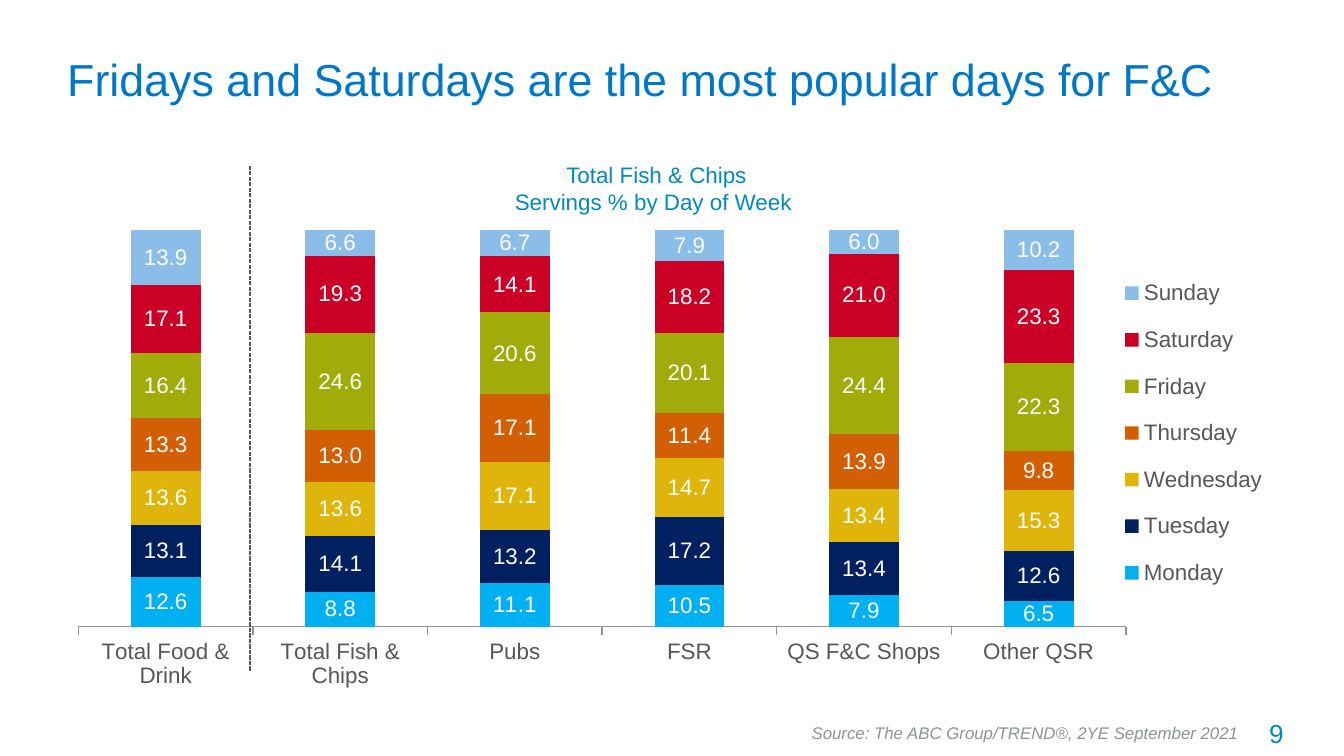
from lxml.etree import SubElement
from pptx import Presentation
from pptx.chart.data import CategoryChartData
from pptx.dml.color import RGBColor
from pptx.enum.chart import XL_CHART_TYPE, XL_LEGEND_POSITION, XL_TICK_LABEL_POSITION, XL_TICK_MARK
from pptx.enum.dml import MSO_LINE
from pptx.enum.shapes import MSO_CONNECTOR
from pptx.enum.text import MSO_ANCHOR, PP_ALIGN
from pptx.oxml.ns import qn
from pptx.util import Inches, Pt

FONT = "Arial"
COLORS = {
    "title": "0077C8", "accent": "008AC0", "text": "54585A", "muted": "8E9396", "label": "FFFFFF",
    "Monday": "00B0F0", "Tuesday": "002060", "Wednesday": "E0B50B", "Thursday": "D25F04",
    "Friday": "A1AC0A", "Saturday": "CA0026", "Sunday": "8ABDE8",
}
CATEGORIES = ["Total Food & Drink", "Total Fish & Chips", "Pubs", "FSR", "QS F&C Shops", "Other QSR"]
SERVINGS = {
    "Monday": [12.6, 8.8, 11.1, 10.5, 7.9, 6.5],
    "Tuesday": [13.1, 14.1, 13.2, 17.2, 13.4, 12.6],
    "Wednesday": [13.6, 13.6, 17.1, 14.7, 13.4, 15.3],
    "Thursday": [13.3, 13.0, 17.1, 11.4, 13.9, 9.8],
    "Friday": [16.4, 24.6, 20.6, 20.1, 24.4, 22.3],
    "Saturday": [17.1, 19.3, 14.1, 18.2, 21.0, 23.3],
    "Sunday": [13.9, 6.6, 6.7, 7.9, 6.0, 10.2],
}


def write(box, lines, size, color, align=PP_ALIGN.LEFT, italic=False, wrap=True, anchor=MSO_ANCHOR.TOP):
    """Fill a box with one paragraph per line, all in one format."""
    frame = box.text_frame
    frame.word_wrap, frame.vertical_anchor = wrap, anchor
    for number, line in enumerate(lines):
        para = frame.add_paragraph() if number else frame.paragraphs[0]
        para.alignment = align
        span = para.add_run()
        span.text = line
        span.font.name, span.font.size, span.font.italic = FONT, Pt(size), italic
        span.font.color.rgb = RGBColor.from_string(COLORS[color])


def place(layout, **shares):
    """Fix a chart part at shares (x, y, w, h) of the chart's size."""
    manual = SubElement(layout, qn("c:manualLayout"))
    if layout.getparent().tag == qn("c:plotArea"):
        SubElement(manual, qn("c:layoutTarget")).set("val", "inner")
    for side in "xy":
        SubElement(manual, qn(f"c:{side}Mode")).set("val", "edge")
    for side, share in shares.items():
        SubElement(manual, qn(f"c:{side}")).set("val", str(share))


# A 16:9 page
deck = Presentation()
deck.slide_width = Inches(10)
deck.slide_height = deck.slide_width * 9 // 16
page = deck.slides.add_slide(deck.slide_layouts[5])
left, width = Inches(0.4), Inches(9.17)

# Title
title = page.shapes.title
title.left, title.top, title.width, title.height = left, Inches(0.23), width, Inches(0.71)
write(title, ["Fridays and Saturdays are the most popular days for F&C"], 24, "title",
      anchor=MSO_ANCHOR.MIDDLE)

# Stacked chart of servings by day
data = CategoryChartData(number_format="0.0")
data.categories = CATEGORIES
for day, values in SERVINGS.items():
    data.add_series(day, values)
chart = page.shapes.add_chart(XL_CHART_TYPE.COLUMN_STACKED_100, left, Inches(1.71),
                              width, Inches(3.56), data).chart
chart.has_title = False
chart.font.name, chart.font.size = FONT, Pt(12)
chart.font.color.rgb = RGBColor.from_string(COLORS["text"])

plot = chart.plots[0]
plot.gap_width, plot.overlap, plot.vary_by_categories = 150, 100, False
for series in plot.series:
    series.format.fill.solid()
    series.format.fill.fore_color.rgb = RGBColor.from_string(COLORS[series.name])
    labels = series.data_labels
    labels.show_value = True
    labels.number_format, labels.number_format_is_linked = "0.0", False
    labels.font.name, labels.font.size = FONT, Pt(12)
    labels.font.color.rgb = RGBColor.from_string(COLORS["label"])

# Axes
chart.value_axis.visible = False
chart.value_axis.has_major_gridlines = False
axis = chart.category_axis
axis.major_tick_mark = XL_TICK_MARK.OUTSIDE
axis.tick_label_position = XL_TICK_LABEL_POSITION.LOW
axis.format.line.color.rgb = RGBColor.from_string(COLORS["muted"])
axis.format.line.width = Pt(0.75)

# Plot area and legend positions
chart.has_legend = True
legend = chart.legend
legend.position, legend.include_in_layout = XL_LEGEND_POSITION.RIGHT, False
area = chart.element.find(".//" + qn("c:plotArea"))
layout = area.find(qn("c:layout"))
if layout is None:
    layout = SubElement(area, qn("c:layout"))
    area.insert(0, layout)
place(layout, x=0.02, y=0, w=0.85, h=0.83)
legend_element = chart.element.find(".//" + qn("c:legend"))
layout = legend_element.find(qn("c:layout"))
if layout is None:
    layout = SubElement(legend_element, qn("c:layout"))
    legend_element.find(qn("c:legendPos")).addnext(layout)
place(layout, x=0.85, y=0.06, w=0.15, h=0.73)

# Chart heading
heading = page.shapes.add_textbox(Inches(3.72), Inches(1.15), Inches(2.33), Inches(0.51))
write(heading, ["Total Fish & Chips", "Servings % by Day of Week "], 12, "accent",
      align=PP_ALIGN.CENTER, wrap=False)

# Divider after the all-food column
divider = page.shapes.add_connector(MSO_CONNECTOR.STRAIGHT, Inches(1.86), Inches(4.99),
                                    Inches(1.86), Inches(1.23))
divider.line.color.rgb = RGBColor.from_string(COLORS["text"])
divider.line.width, divider.line.dash_style = Pt(0.75), MSO_LINE.SQUARE_DOT
SubElement(divider.element.spPr, qn("a:effectLst"))

# Footer: source and page number
source = page.shapes.add_textbox(Inches(5.94), Inches(5.33), Inches(3.41), Inches(0.25))
write(source, ["Source: The ABC Group/TREND®, 2YE September 2021"], 9, "muted", italic=True, wrap=False)
number_box = page.shapes.add_textbox(Inches(8.85), Inches(5.29), Inches(0.8), Inches(0.34))
write(number_box, ["9"], 14, "accent", align=PP_ALIGN.RIGHT)

deck.save("out.pptx")
